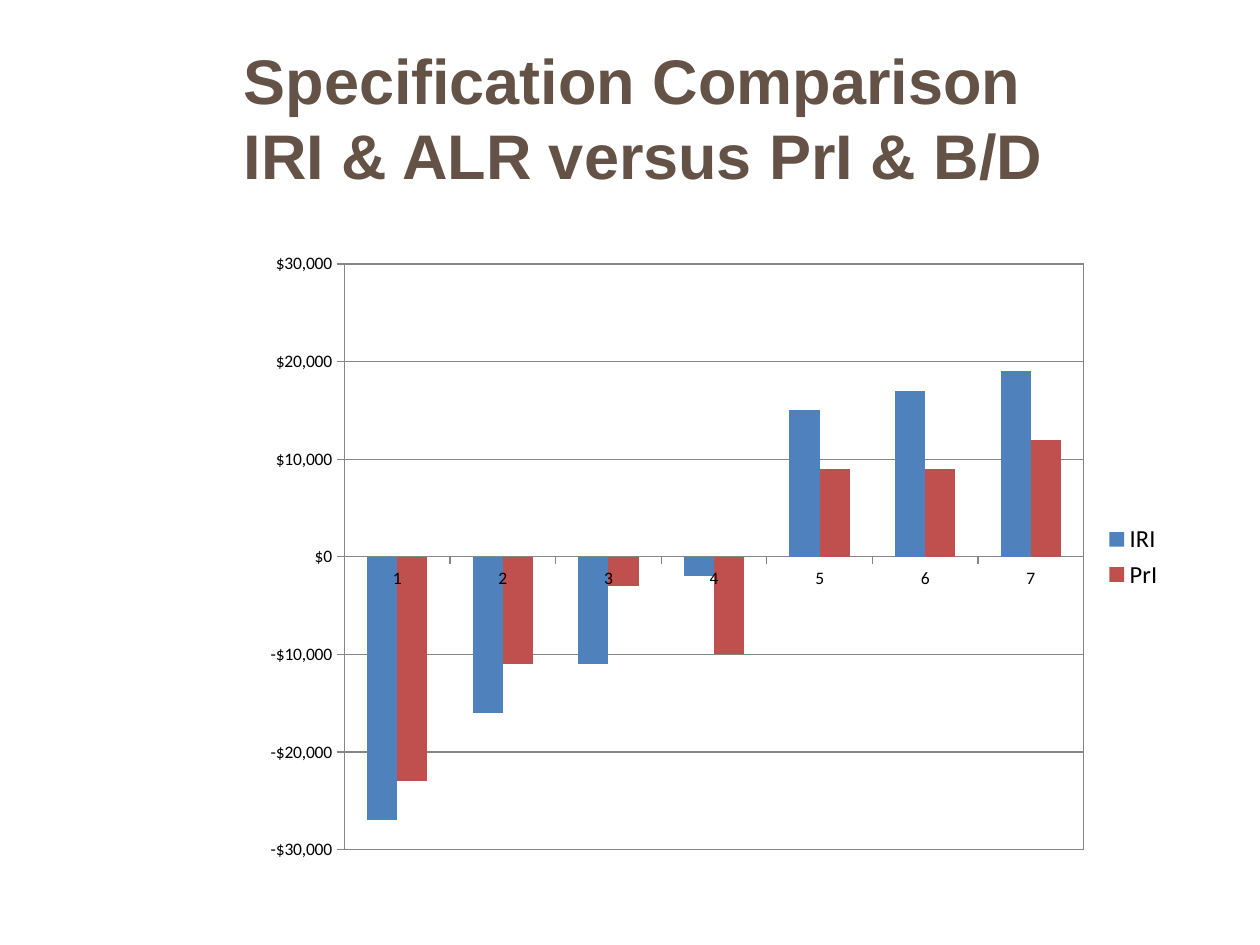
import pptx
import pptx.chart.data
import pptx.dml.color
import pptx.enum.chart
import pptx.enum.text
import pptx.oxml
import pptx.oxml.ns
import pptx.util

BROWN = pptx.dml.color.RGBColor(0x64, 0x52, 0x46)
BLACK = pptx.dml.color.RGBColor(0x00, 0x00, 0x00)
GRAY = pptx.dml.color.RGBColor(0x86, 0x86, 0x86)
BLUE = pptx.dml.color.RGBColor(0x4F, 0x81, 0xBD)
RED = pptx.dml.color.RGBColor(0xC0, 0x50, 0x4D)
PX = 914400 / 126


def px(*lengths):
    return [pptx.util.Emu(round(n * PX)) for n in lengths]


prs = pptx.Presentation()
prs.slide_width, prs.slide_height = px(1260, 945)
s = prs.slides.add_slide(prs.slide_layouts[5])

sp = s.shapes.title
sp.left, sp.top, sp.width, sp.height = px(231, 38, 998, 158)
tf = sp.text_frame
tf.word_wrap = True
tf.auto_size = pptx.enum.text.MSO_AUTO_SIZE.NONE
tf.vertical_anchor = pptx.enum.text.MSO_ANCHOR.MIDDLE
p = tf.paragraphs[0]
p.alignment = pptx.enum.text.PP_ALIGN.LEFT
for i, line in enumerate(["Specification Comparison", "IRI & ALR versus PrI & B/D"]):
    if i:
        p.add_line_break()
    r = p.add_run()
    r.text = line
    r.font.name = "Arial"
    r.font.size = pptx.util.Pt(36)
    r.font.bold = True
    r.font.color.rgb = BROWN

data = pptx.chart.data.CategoryChartData(number_format='"$"#,##0')
data.categories = [str(n) for n in range(1, 8)]
data.add_series("IRI", [-27000, -16000, -11000, -2000, 15000, 17000, 19000])
data.add_series("PrI", [-23000, -11000, -3000, -10000, 9000, 9000, 12000])
chart = s.shapes.add_chart(
    pptx.enum.chart.XL_CHART_TYPE.COLUMN_CLUSTERED, *px(252, 242, 924, 630), data
).chart
chart.has_title = False
chart.font.name = "Calibri"
chart.font.size = pptx.util.Pt(10)
chart.font.color.rgb = BLACK

plot = chart.plots[0]
plot.gap_width = 150
plot.overlap = 0
plot.vary_by_categories = False
for series, color in zip(plot.series, [BLUE, RED]):
    series.invert_if_negative = False
    series.format.fill.solid()
    series.format.fill.fore_color.rgb = color

val = chart.value_axis
val.minimum_scale = -30000
val.maximum_scale = 30000
val.major_unit = 10000
val.has_major_gridlines = True
val.tick_labels.number_format = '"$"#,##0'
val.tick_labels.number_format_is_linked = False
cat = chart.category_axis
for axis in (val, cat):
    axis.major_tick_mark = pptx.enum.chart.XL_TICK_MARK.OUTSIDE
    axis.minor_tick_mark = pptx.enum.chart.XL_TICK_MARK.NONE
for part in (val, cat, val.major_gridlines):
    part.format.line.color.rgb = GRAY
    part.format.line.width = pptx.util.Pt(0.75)

chart.has_legend = True
legend = chart.legend
legend.position = pptx.enum.chart.XL_LEGEND_POSITION.RIGHT
legend.include_in_layout = False
legend.font.name = "Calibri"
legend.font.size = pptx.util.Pt(14)
legend.font.color.rgb = BLACK

area = chart.element.find(".//" + pptx.oxml.ns.qn("c:plotArea"))
for old in area.findall(pptx.oxml.ns.qn("c:layout")):
    area.remove(old)
area.insert(0, pptx.oxml.parse_xml(
    f'<c:layout {pptx.oxml.ns.nsdecls("c")}><c:manualLayout><c:layoutTarget val="inner"/>'
    '<c:xMode val="edge"/><c:yMode val="edge"/><c:x val="0.1"/><c:y val="0.035"/>'
    '<c:w val="0.8"/><c:h val="0.93"/></c:manualLayout></c:layout>'))
area.append(pptx.oxml.parse_xml(
    f'<c:spPr {pptx.oxml.ns.nsdecls("c", "a")}><a:noFill/><a:ln w="9525"><a:solidFill>'
    f'<a:srgbClr val="{GRAY}"/></a:solidFill></a:ln></c:spPr>'))

prs.save("out.pptx")
